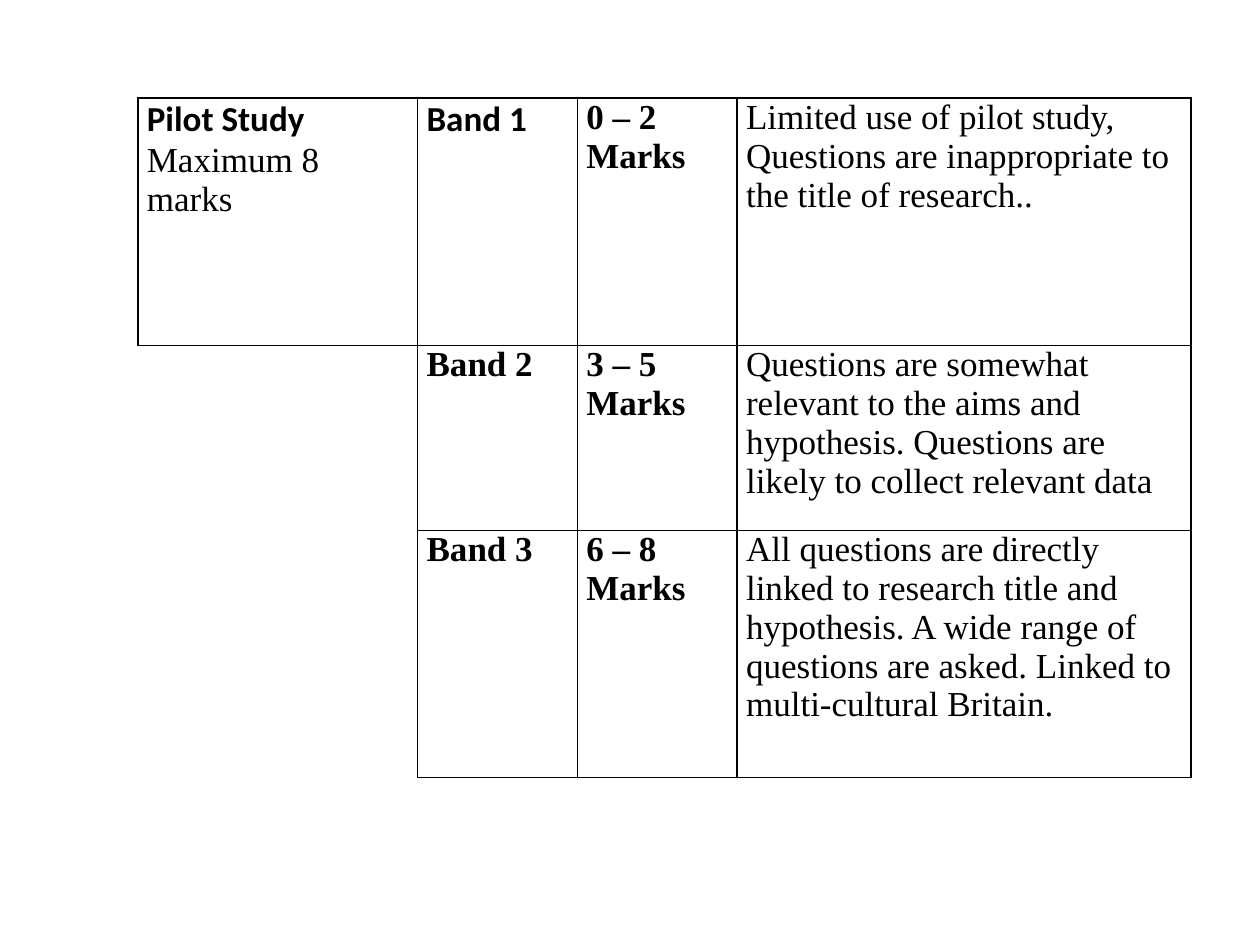
"""Build the slide with the marking bands for the pilot study."""
from dataclasses import dataclass

from lxml.etree import SubElement
from pptx import Presentation
from pptx.dml.color import RGBColor as Rgb
from pptx.oxml.ns import qn
from pptx.util import Cm, Pt


@dataclass(frozen=True)
class Theme:
    """Colours, fonts and sizes."""
    ink: str = "000000"
    heading: str = "Calibri"
    body: str = "Times New Roman"
    size: int = 20
    rule: int = 1


class SlideBuilder:
    """Holds the theme and the current slide."""

    def __init__(self, slide, theme):
        self.slide = slide
        self.theme = theme

    def table(self, left, top, widths, heights, rows):
        """Add a table, with lengths in centimetres."""
        grid = self.slide.shapes.add_table(
            len(heights), len(widths), Cm(left), Cm(top), Cm(sum(widths)), Cm(sum(heights))
        ).table
        for flag in ("first_row", "horz_banding"):
            setattr(grid, flag, False)
        for column, width in zip(grid.columns, widths):
            column.width = Cm(width)
        for row, height, contents in zip(grid.rows, heights, rows):
            row.height = Cm(height)
            for cell, (paragraphs, sides) in zip(row.cells, contents):
                self.cell(cell, paragraphs, sides)

    def cell(self, cell, paragraphs, sides):
        """Fill in one cell and rule the given sides."""
        margins = {"margin_left": Cm(0.18), "margin_right": Cm(0.18),
                   "margin_top": 0, "margin_bottom": 0}
        for name, value in margins.items():
            setattr(cell, name, value)
        self.borders(cell, sides)
        cell.fill.background()
        frame = cell.text_frame
        for index, (text, font, bold) in enumerate(paragraphs):
            paragraph = frame.add_paragraph() if index else frame.paragraphs[0]
            run = paragraph.add_run()
            run.text = text
            style = {"name": font, "size": Pt(self.theme.size), "bold": bold}
            for name, value in style.items():
                setattr(run.font, name, value)
            run.font.color.rgb = Rgb.from_string(self.theme.ink)

    def borders(self, cell, sides):
        """Rule the given sides and clear the others."""
        properties = cell._tc.get_or_add_tcPr()
        for side in "LRTB":
            line = SubElement(properties, qn(f"a:ln{side}"), w=str(Pt(self.theme.rule)))
            if side in sides:
                fill = SubElement(line, qn("a:solidFill"))
                SubElement(fill, qn("a:srgbClr"), val=self.theme.ink)
            else:
                SubElement(line, qn("a:noFill"))


def main():
    """Create and save the presentation."""
    theme = Theme()
    deck = Presentation()
    deck.slide_width, deck.slide_height = Cm(25.4), Cm(19.05)
    builder = SlideBuilder(deck.slides.add_slide(deck.slide_layouts[6]), theme)

    bands = [
        ("Band 1", theme.heading, "0 – 2",
         "Limited use of pilot study, Questions are inappropriate to the title of research.."),
        ("Band 2", theme.body, "3 – 5",
         "Questions are somewhat relevant to the aims and hypothesis. "
         "Questions are likely to collect relevant data"),
        ("Band 3", theme.body, "6 – 8",
         "All questions are directly linked to research title and hypothesis. "
         "A wide range of questions are asked. Linked to multi-cultural Britain."),
    ]
    criterion = [("Pilot Study", theme.heading, True), ("Maximum 8 marks", theme.body, False)]
    first_column = [(criterion, "LRTB"), ([], "RT"), ([], "R")]
    rows = [
        [
            first,
            ([(band, font, True)], "LRTB"),
            ([(marks, theme.body, True), ("Marks", theme.body, True)], "LRTB"),
            ([(descriptor, theme.body, False)], "LRTB"),
        ]
        for first, (band, font, marks, descriptor) in zip(first_column, bands)
    ]
    builder.table(2.78, 1.98, [5.64, 3.22, 3.22, 9.15], [4.98, 3.73, 4.98], rows)
    deck.save("out.pptx")


if __name__ == "__main__":
    main()
